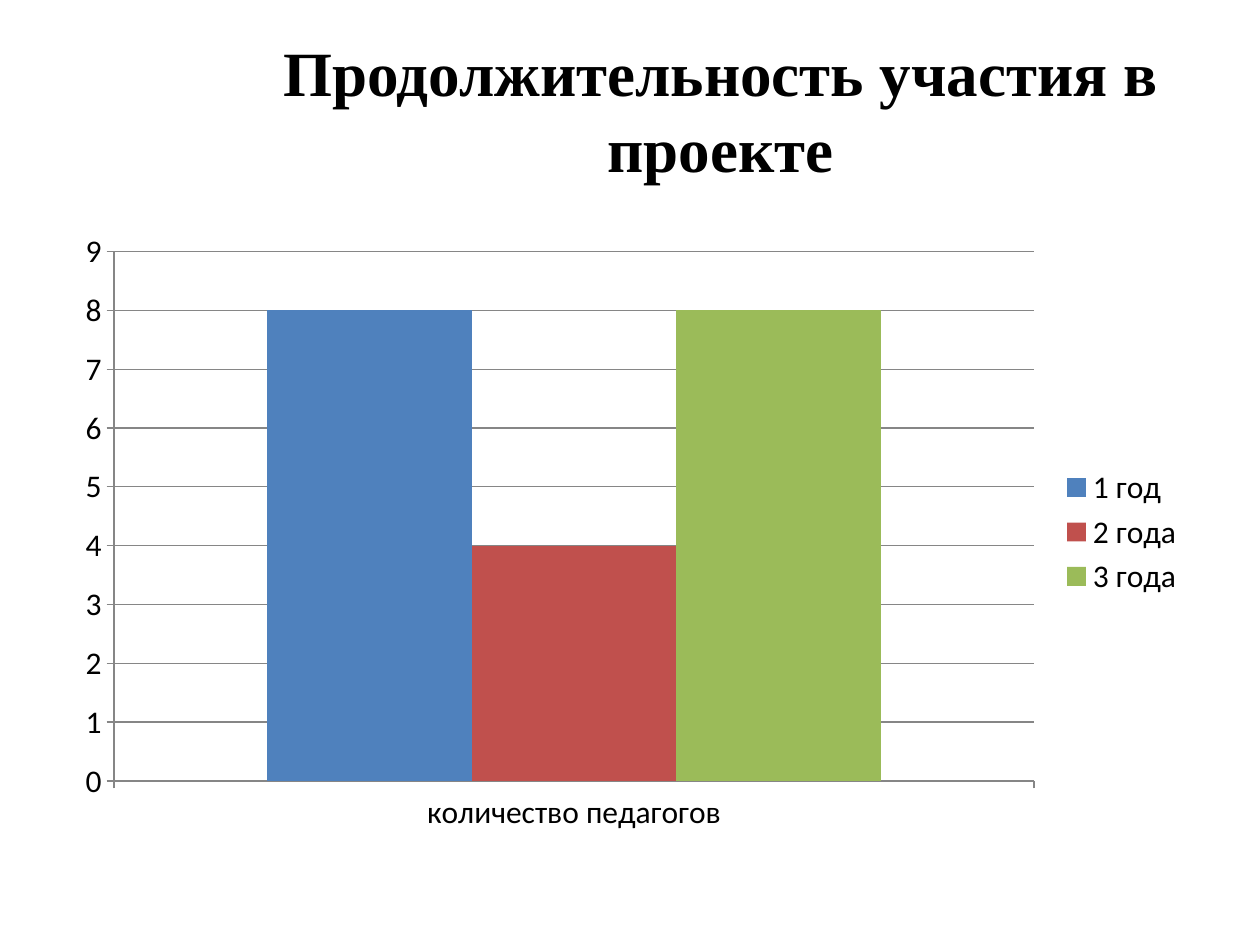
from dataclasses import dataclass

from pptx import Presentation
from pptx import util as u
from pptx.chart.data import CategoryChartData
from pptx.dml.color import RGBColor
from pptx.enum import chart as ch, text

PX = 914400 / 126


def px(*lengths):
    return [u.Emu(round(n * PX)) for n in lengths]


@dataclass(frozen=True)
class Theme:
    background: str = "FFFFFF"
    ink: str = "000000"
    grid: str = "868686"
    series: tuple = ("4F81BD", "C0504D", "9BBB59")
    title_font: str = "Times New Roman"
    chart_font: str = "Calibri"
    title_size: int = 36
    chart_size: int = 18
    line_width: float = 0.75


class SlideBuilder:
    def __init__(self, slide, theme):
        self.s = slide
        self.theme = theme
        fill = slide.background.fill
        fill.solid()
        fill.fore_color.rgb = RGBColor.from_string(theme.background)

    def set_font(self, font, name, size, bold=False):
        font.name = name
        font.size = u.Pt(size)
        font.bold = bold
        font.color.rgb = RGBColor.from_string(self.theme.ink)

    def set_line(self, line):
        line.color.rgb = RGBColor.from_string(self.theme.grid)
        line.width = u.Pt(self.theme.line_width)

    def title(self, words, *box):
        sp = self.s.shapes.title
        sp.left, sp.top, sp.width, sp.height = px(*box)
        tf = sp.text_frame
        tf.text = words
        tf.word_wrap = True
        tf.auto_size = text.MSO_AUTO_SIZE.NONE
        tf.vertical_anchor = text.MSO_ANCHOR.MIDDLE
        p = tf.paragraphs[0]
        p.alignment = text.PP_ALIGN.CENTER
        self.set_font(p.font, self.theme.title_font, self.theme.title_size, True)

    def column_chart(self, categories, series, *box):
        data = CategoryChartData()
        data.categories = categories
        for name, values in series.items():
            data.add_series(name, values)
        chart = self.s.shapes.add_chart(
            ch.XL_CHART_TYPE.COLUMN_CLUSTERED, *px(*box), data
        ).chart
        self.set_font(chart.font, self.theme.chart_font, self.theme.chart_size)
        chart.has_title = False
        chart.has_legend = True
        chart.legend.position = ch.XL_LEGEND_POSITION.RIGHT
        chart.legend.include_in_layout = False
        for axis in (chart.category_axis, chart.value_axis):
            axis.major_tick_mark = ch.XL_TICK_MARK.OUTSIDE
            self.set_line(axis.format.line)
        chart.value_axis.has_major_gridlines = True
        self.set_line(chart.value_axis.major_gridlines.format.line)
        plot = chart.plots[0]
        plot.vary_by_categories = False
        plot.gap_width = 150
        plot.overlap = 0
        for item, color in zip(plot.series, self.theme.series):
            item.format.fill.solid()
            item.format.fill.fore_color.rgb = RGBColor.from_string(color)


def main():
    prs = Presentation()
    prs.slide_width, prs.slide_height = px(1260, 945)
    slide = SlideBuilder(prs.slides.add_slide(prs.slide_layouts[5]), Theme())
    slide.title("Продолжительность участия в проекте", 213, 45, 1015, 129)
    slide.column_chart(
        ["количество педагогов"],
        {"1 год": [8], "2 года": [4], "3 года": [8]},
        63, 220, 1134, 624,
    )
    prs.save("out.pptx")


if __name__ == "__main__":
    main()
